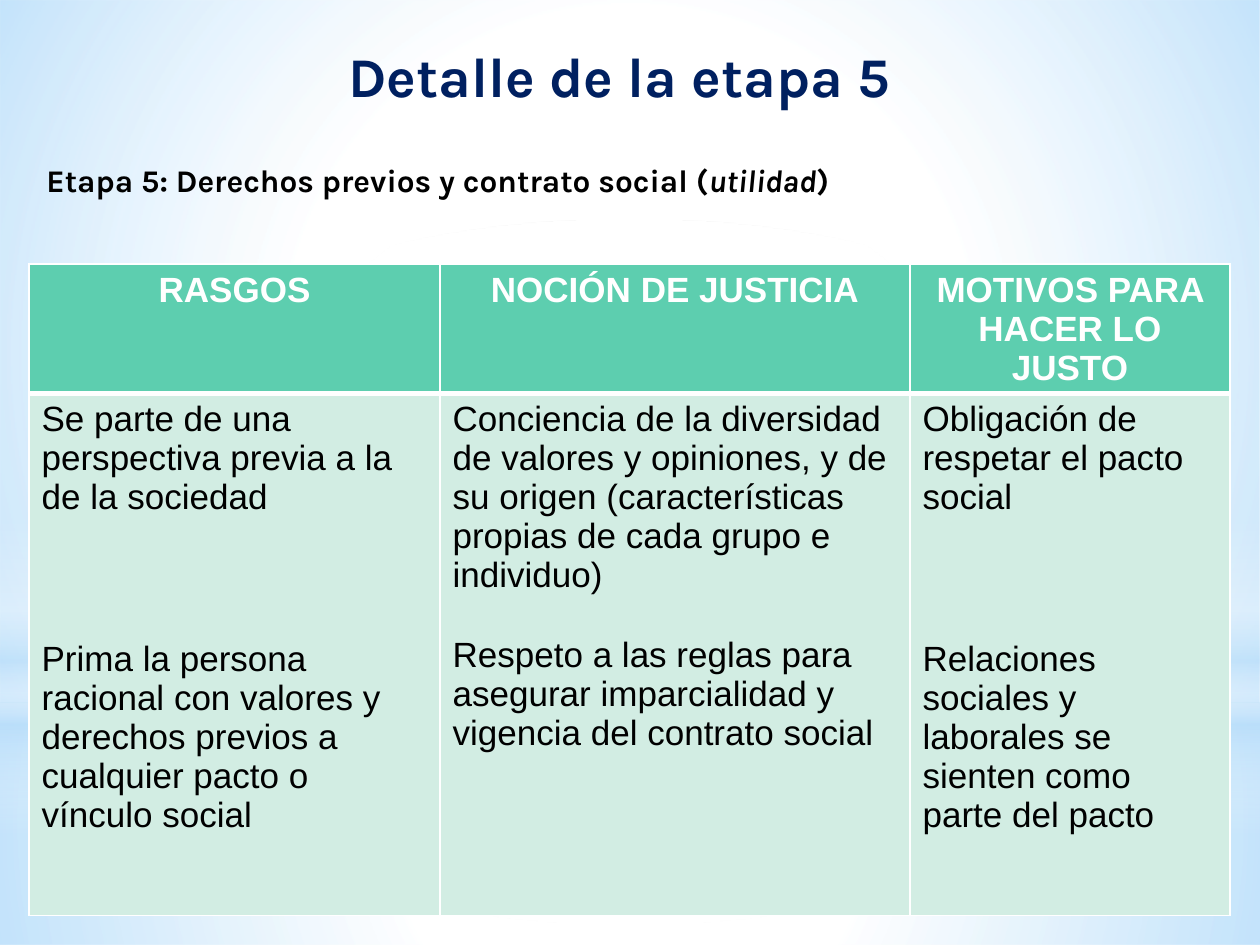
from pptx import Presentation
from pptx.dml.color import RGBColor
from pptx.enum.shapes import MSO_SHAPE
from pptx.enum.text import MSO_AUTO_SIZE, PP_ALIGN
from pptx.oxml import parse_xml
from pptx.oxml.ns import nsdecls, qn
from pptx.util import Pt

RECT, OVAL = MSO_SHAPE.RECTANGLE, MSO_SHAPE.OVAL
LEFT, CENTER = PP_ALIGN.LEFT, PP_ALIGN.CENTER
GROW = MSO_AUTO_SIZE.SHAPE_TO_FIT_TEXT
PX = 914400 / 126

THEME = {
    "white": "FFFFFF", "sky": "B4DCFA", "header": "5DCEAF", "body": "D2EDE3",
    "title": dict(name="Karla", size=Pt(32), bold=True, color="002060"),
    "subtitle": dict(name="Karla", size=Pt(18), bold=True, color="000000"),
    "head_text": dict(name="Arial", size=Pt(20), bold=True, color="FFFFFF"),
    "body_text": dict(name="Arial", size=Pt(20), bold=False, color="000000"),
}
WHITE, SKY = THEME["white"], THEME["sky"]


def px(*lengths):
    return [round(n * PX) for n in lengths]


def add_run(p, text, **fmt):
    r = p.add_run()
    r.text = text
    for key, value in fmt.items():
        if key == "color":
            r.font.color.rgb = RGBColor.from_string(value)
        else:
            setattr(r.font, key, value)


prs = Presentation()
prs.slide_width, prs.slide_height = px(1260, 945)
s = prs.slides.add_slide(prs.slide_layouts[6])

# Backdrop: stops are (position %, colour, opacity %)
RADIAL = ('<a:path path="circle"><a:fillToRect l="50000" t="50000" '
          'r="50000" b="50000"/></a:path>')
DOWN = '<a:lin ang="5400000" scaled="0"/>'
backdrop = [
    (RECT, (0, 703, 1260, 242), RADIAL,
     [(0, WHITE, 91), (37, WHITE, 76), (100, SKY, 79)]),
    (RECT, (0, 0, 1260, 703), RADIAL,
     [(0, WHITE, 89), (48, WHITE, 62), (100, SKY, 79)]),
    (RECT, (0, 519, 1260, 315), DOWN,
     [(0, WHITE, 0), (29, WHITE, 30), (45, SKY, 40),
      (55, WHITE, 26), (65, SKY, 60), (100, WHITE, 0)]),
    (OVAL, (0, 220, 1260, 703), RADIAL, [(0, WHITE, 100), (56, WHITE, 0)]),
]
for kind, box, direction, stops in backdrop:
    sp = s.shapes.add_shape(kind, *px(*box))
    sp.shadow.inherit = False
    sp.line.fill.background()
    sp.fill.background()
    stop_xml = "".join(
        f'<a:gs pos="{pos * 1000}"><a:srgbClr val="{color}">'
        f'<a:alpha val="{alpha * 1000}"/></a:srgbClr></a:gs>'
        for pos, color, alpha in stops)
    gradient = parse_xml(
        f'<a:gradFill {nsdecls("a")} rotWithShape="1">'
        f'<a:gsLst>{stop_xml}</a:gsLst>{direction}</a:gradFill>')
    spPr = sp._element.spPr
    spPr.replace(spPr.find(qn("a:noFill")), gradient)

# Table: each cell lists (text, space before in points)
rows = [
    [[("RASGOS", 0)],
     [("NOCIÓN DE JUSTICIA", 0)],
     [("MOTIVOS PARA HACER LO JUSTO", 0)]],
    [[("Se parte de una perspectiva previa a la de la sociedad", 0),
      ("Prima la persona racional con valores y derechos previos a "
       "cualquier pacto o vínculo social", 70)],
     [("Conciencia de la diversidad de valores y opiniones, y de su origen "
       "(características propias de cada grupo e individuo)", 0),
      ("Respeto a las reglas para asegurar imparcialidad y vigencia del "
       "contrato social", 23)],
     [("Obligación de respetar el pacto social", 0),
      ("Relaciones sociales y laborales se sienten como parte del pacto", 70)]],
]
row_styles = [
    dict(height=122, fill="header", font="head_text", align=CENTER,
         borders=dict(L=1, R=1, T=1, B=3)),
    dict(height=522, fill="body", font="body_text", align=LEFT,
         borders=dict(L=1, R=1, T=3, B=1)),
]
table = s.shapes.add_table(2, 3, *px(29, 264, 1201, 644)).table
for column, width in zip(table.columns, px(411, 470, 320)):
    column.width = width
for row, contents, style in zip(table.rows, rows, row_styles):
    row.height = px(style["height"])[0]
    for cell, paragraphs in zip(row.cells, contents):
        tcPr = cell._tc.get_or_add_tcPr()
        for side, width in style["borders"].items():
            tcPr.append(parse_xml(
                f'<a:ln{side} {nsdecls("a")} w="{Pt(width)}"><a:solidFill>'
                f'<a:srgbClr val="{WHITE}"/></a:solidFill></a:ln{side}>'))
        cell.fill.solid()
        cell.fill.fore_color.rgb = RGBColor.from_string(THEME[style["fill"]])
        tf = cell.text_frame
        for i, (text, gap) in enumerate(paragraphs):
            p = tf.add_paragraph() if i else tf.paragraphs[0]
            p.alignment = style["align"]
            if gap:
                p.space_before = Pt(gap)
            add_run(p, text, **THEME[style["font"]])

# Headings: each run is (text, italic)
headings = [
    ((0, 35, 1239, 81), CENTER, "title", [("Detalle de la etapa 5", False)]),
    ((34, 155, 1182, 64), LEFT, "subtitle",
     [("Etapa 5: Derechos previos y contrato social (", False),
      ("utilidad", True), (")", False)]),
]
for box, align, font, runs in headings:
    tf = s.shapes.add_textbox(*px(*box)).text_frame
    tf.word_wrap = True
    tf.auto_size = GROW
    p = tf.paragraphs[0]
    p.alignment = align
    for text, italic in runs:
        add_run(p, text, italic=italic, **THEME[font])

prs.save("out.pptx")
